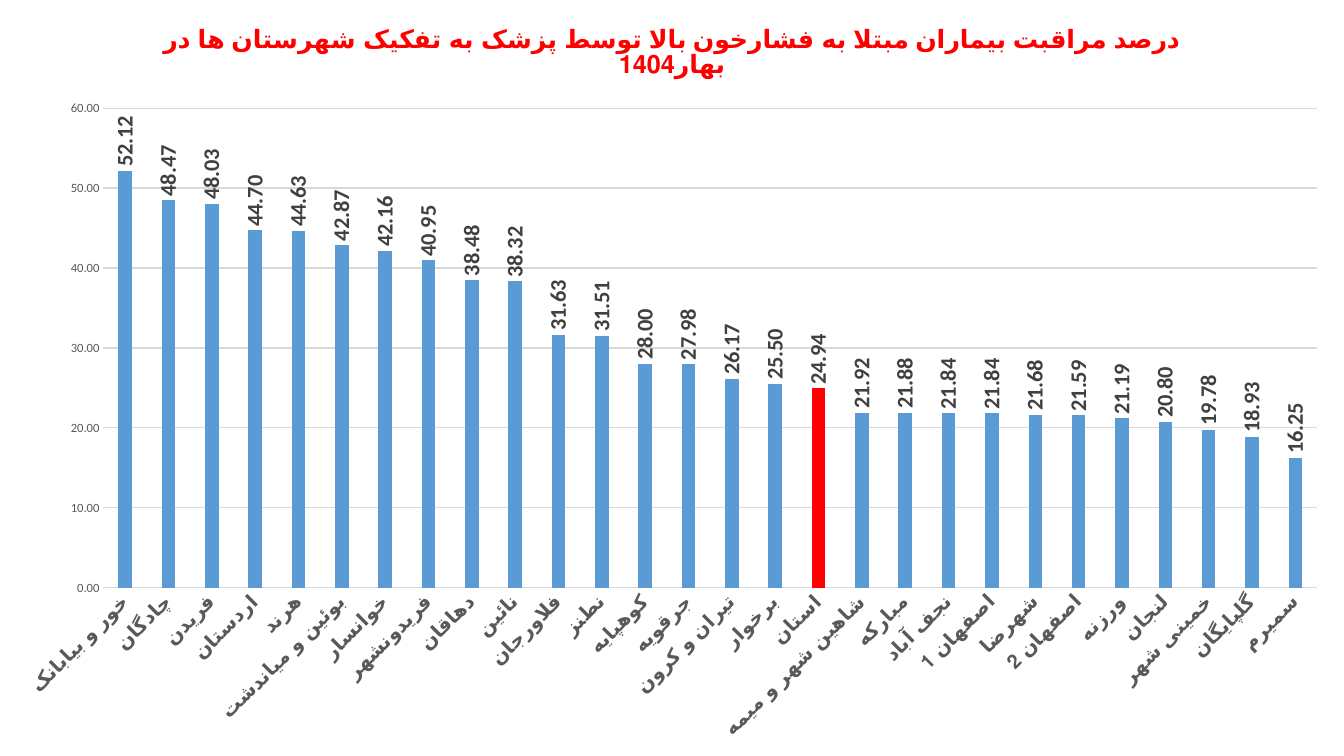
from pptx import Presentation
from pptx.chart.data import CategoryChartData
from pptx.dml.color import RGBColor
from pptx.enum.chart import XL_CHART_TYPE as ChartType
from pptx.enum.chart import XL_LABEL_POSITION as LabelPosition
from pptx.enum.chart import XL_TICK_MARK as TickMark
from pptx.oxml import parse_xml
from pptx.oxml.ns import nsdecls
from pptx.util import Inches, Pt

COLORS = {
    "bar": "5B9BD5",
    "highlight": "FF0000",
    "text": "000000",
    "axis": "595959",
    "value": "404040",
    "grid": "D9D9D9",
}
FONT = "Calibri"
TITLE = "درصد مراقبت بیماران مبتلا به فشارخون بالا توسط پزشک به تفکیک شهرستان ها در بهار1404"
PROVINCE = "استان"
CARE_RATES = {
    "خور و بیابانک": 52.12,
    "چادگان": 48.47,
    "فریدن": 48.03,
    "اردستان": 44.7,
    "هرند": 44.63,
    "بوئین و میاندشت": 42.87,
    "خوانسار": 42.16,
    "فریدونشهر": 40.95,
    "دهاقان": 38.48,
    "نائین": 38.32,
    "فلاورجان": 31.63,
    "نطنز": 31.51,
    "کوهپایه": 28,
    "جرقویه": 27.98,
    "تیران و کرون": 26.17,
    "برخوار": 25.5,
    PROVINCE: 24.94,
    "شاهین شهر و میمه": 21.92,
    "مبارکه": 21.88,
    "نجف آباد": 21.84,
    "اصفهان 1": 21.84,
    "شهرضا": 21.68,
    "اصفهان 2": 21.59,
    "ورزنه": 21.19,
    "لنجان": 20.8,
    "خمینی شهر": 19.78,
    "گلپایگان": 18.93,
    "سمیرم": 16.25,
}


def color(name):
    return RGBColor.from_string(COLORS[name])


def style_font(font, size, tone, bold=False):
    font.name = FONT
    font.size = Pt(size)
    font.bold = bold
    font.color.rgb = color(tone)


def write(frame, text, **style):
    run = frame.paragraphs[0].add_run()
    run.text = text
    style_font(run.font, **style)


def rotate(element, degrees):
    body = element.xpath("c:txPr/a:bodyPr")[0]
    body.set("rot", str(degrees * 60000))
    body.set("vert", "horz")


class SlideBuilder:
    def __init__(self, slide):
        self.slide = slide

    def column_chart(self, rates, left, top, width, height):
        data = CategoryChartData(number_format="0.00")
        data.categories = list(rates)
        data.add_series("Series 1", list(rates.values()))
        chart = self.slide.shapes.add_chart(
            ChartType.COLUMN_CLUSTERED, Inches(left), Inches(top),
            Inches(width), Inches(height), data).chart
        chart.has_legend = False
        style_font(chart.font, 10, "text")
        return chart

    def title(self, chart, text):
        chart.has_title = True
        chart.chart_title.include_in_layout = False
        write(chart.chart_title.text_frame, text, size=18, tone="highlight", bold=True)

    def plot_area(self, chart, x, y, w, h):
        area = chart.plots[0]._element.getparent()
        for layout in area.xpath("c:layout"):
            area.remove(layout)
        sizes = "".join(f'<c:{key} val="{value}"/>'
                        for key, value in zip("xywh", (x, y, w, h)))
        area.insert(0, parse_xml(
            f'<c:layout {nsdecls("c")}><c:manualLayout><c:layoutTarget val="inner"/>'
            f'<c:xMode val="edge"/><c:yMode val="edge"/>{sizes}'
            '</c:manualLayout></c:layout>'))

    def axes(self, chart):
        counties, percent = chart.category_axis, chart.value_axis
        for axis in (counties, percent):
            axis.major_tick_mark = axis.minor_tick_mark = TickMark.NONE
        style_font(counties.tick_labels.font, 14, "axis", bold=True)
        rotate(counties._element, -45)
        style_font(percent.tick_labels.font, 9, "axis")
        percent.minimum_scale, percent.maximum_scale, percent.major_unit = 0, 60, 10
        percent.tick_labels.number_format = "0.00"
        percent.tick_labels.number_format_is_linked = False
        percent.format.line.fill.background()
        percent.has_major_gridlines = True
        for line in (counties.format.line, percent.major_gridlines.format.line):
            line.color.rgb = color("grid")
            line.width = Pt(0.75)

    def bars(self, chart, highlighted):
        plot = chart.plots[0]
        plot.vary_by_categories = False
        plot.gap_width, plot.overlap = 219, -27
        series = plot.series[0]
        series.invert_if_negative = False
        for part, tone in ((series, "bar"), (series.points[highlighted], "highlight")):
            part.format.fill.solid()
            part.format.fill.fore_color.rgb = color(tone)
        labels = series.data_labels
        labels.show_value = True
        labels.number_format = "0.00"
        labels.number_format_is_linked = False
        labels.position = LabelPosition.OUTSIDE_END
        style_font(labels.font, 16, "value", bold=True)
        rotate(labels._element, -90)


def main():
    deck = Presentation()
    deck.slide_width, deck.slide_height = Inches(13.33), Inches(7.5)
    builder = SlideBuilder(deck.slides.add_slide(deck.slide_layouts[6]))

    # Chart over the whole slide
    chart = builder.column_chart(CARE_RATES, 0, 0, 13.33, 7.5)
    builder.title(chart, TITLE)
    builder.plot_area(chart, 0.077, 0.143, 0.903, 0.635)

    # Axes and bars, with the province average highlighted
    builder.axes(chart)
    builder.bars(chart, list(CARE_RATES).index(PROVINCE))

    deck.save("out.pptx")


if __name__ == "__main__":
    main()
